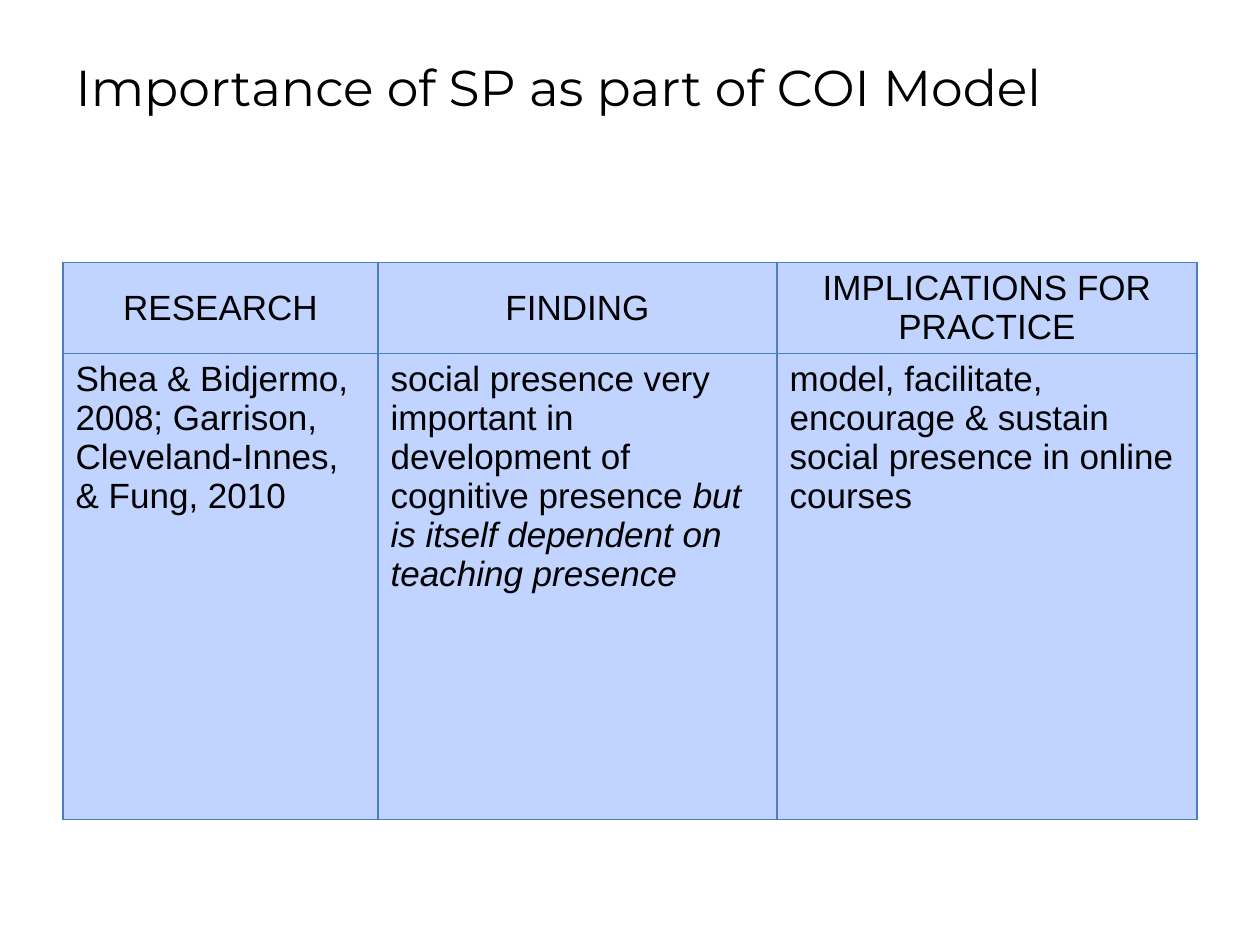
import pptx
import pptx.dml.color
import pptx.enum.text
import pptx.oxml
import pptx.oxml.ns
import pptx.util

Pt = pptx.util.Pt
ALIGN = pptx.enum.text.PP_ALIGN
ANCHOR = pptx.enum.text.MSO_ANCHOR

BLACK = "000000"
CELL_BLUE = "C0D4FF"
BORDER_BLUE = "4B7EBC"

COLUMN_WIDTHS = [180, 228, 240]
ROW_HEIGHTS = [52, 266.4]
HEADINGS = ["RESEARCH", "FINDING", "IMPLICATIONS FOR PRACTICE"]
DETAILS = [
    [("Shea & Bidjermo, 2008; Garrison, Cleveland-Innes, & Fung, 2010", False)],
    [
        ("social presence very important in development of cognitive presence ", False),
        ("but is itself dependent on teaching presence", True),
    ],
    [("model, facilitate, encourage & sustain social presence in online courses", False)],
]


def color(value):
    return pptx.dml.color.RGBColor.from_string(value)


def set_font(font, name, size):
    font.name = name
    font.size = Pt(size)
    font.bold = False
    font.color.rgb = color(BLACK)


def add_title(page, text):
    title = page.shapes.title
    title.left, title.top, title.width, title.height = Pt(36), Pt(21.6), Pt(648), Pt(56)
    title.text_frame.text = text
    title.text_frame.vertical_anchor = ANCHOR.MIDDLE
    para = title.text_frame.paragraphs[0]
    para.alignment = ALIGN.LEFT
    set_font(para.font, "Montserrat", 28.8)


def add_borders(cell, value, width):
    properties = cell._tc.get_or_add_tcPr()
    for position, side in enumerate(("lnL", "lnR", "lnT", "lnB")):
        line = pptx.oxml.parse_xml(
            f'<a:{side} {pptx.oxml.ns.nsdecls("a")} w="{Pt(width)}">'
            f'<a:solidFill><a:srgbClr val="{value}"/></a:solidFill></a:{side}>'
        )
        properties.insert(position, line)


def fill_cell(cell, spans, alignment, anchor):
    cell.fill.solid()
    cell.fill.fore_color.rgb = color(CELL_BLUE)
    cell.vertical_anchor = anchor
    add_borders(cell, BORDER_BLUE, 0.75)
    para = cell.text_frame.paragraphs[0]
    para.alignment = alignment
    set_font(para.font, "Arial", 20)
    for text, italic in spans:
        span = para.add_run()
        span.text = text
        set_font(span.font, "Arial", 20)
        span.font.italic = italic


def add_findings_table(page):
    frame = page.shapes.add_table(
        len(ROW_HEIGHTS), len(COLUMN_WIDTHS),
        Pt(36), Pt(150), Pt(sum(COLUMN_WIDTHS)), Pt(sum(ROW_HEIGHTS)),
    )
    table = frame.table
    table.horz_banding = False
    for column, width in zip(table.columns, COLUMN_WIDTHS):
        column.width = Pt(width)
    for row, height in zip(table.rows, ROW_HEIGHTS):
        row.height = Pt(height)
    for index, (heading, detail) in enumerate(zip(HEADINGS, DETAILS)):
        fill_cell(table.cell(0, index), [(heading, False)], ALIGN.CENTER, ANCHOR.MIDDLE)
        fill_cell(table.cell(1, index), detail, ALIGN.LEFT, ANCHOR.TOP)


def main():
    deck = pptx.Presentation()
    deck.slide_width, deck.slide_height = Pt(720), Pt(540)
    page = deck.slides.add_slide(deck.slide_layouts[5])
    add_title(page, "Importance of SP as part of COI Model")
    add_findings_table(page)
    deck.save("out.pptx")


if __name__ == "__main__":
    main()
